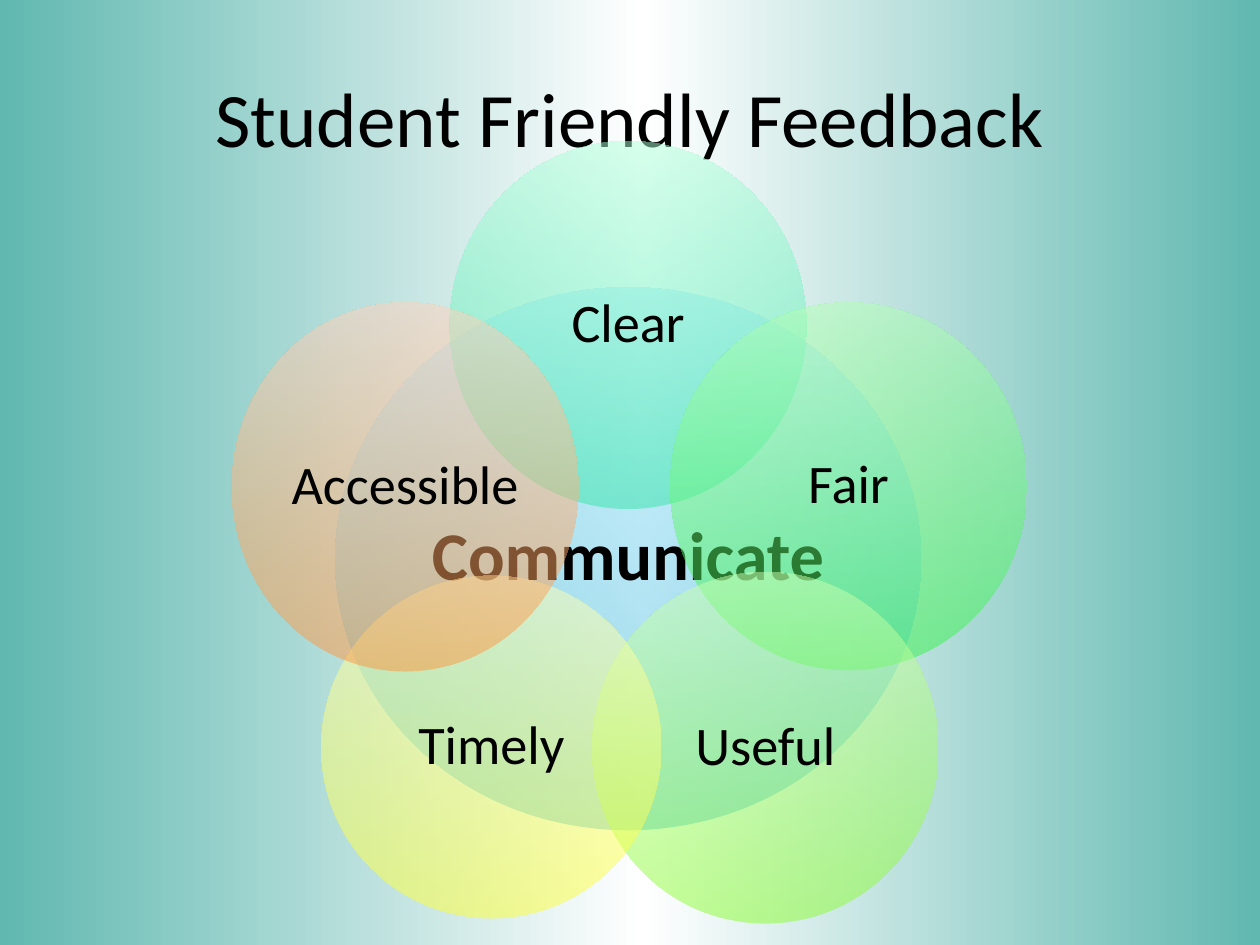
from lxml.etree import SubElement
from pptx import Presentation
from pptx.dml.color import RGBColor
from pptx.enum.shapes import MSO_SHAPE as SHAPE
from pptx.enum.text import MSO_ANCHOR as ANCHOR, PP_ALIGN as ALIGN
from pptx.oxml.ns import qn
from pptx.util import Inches, Pt

FONT = "Calibri"
COLORS = {
    "text": "000000", "edge": "60B8B0", "middle": "FFFFFF",
    "blue": "39B7D8", "pale blue": "A7E6FF",
    "mint": "34E6A9", "pale mint": "ACFFD9",
    "green": "31F245", "pale green": "B0FFB4",
    "lime": "8AFD2E", "pale lime": "CCFFB4",
    "yellow": "FEFF35", "pale yellow": "FFFFB9",
    "orange": "FF953E", "pale orange": "FFD2BD",
}

# Outer circles: label, colour, left, top, width, height in inches
PETALS = [
    ("Clear", "mint", 3.57, 1.12, 2.83, 2.92),
    ("Fair", "green", 5.32, 2.4, 2.83, 2.92),
    ("Useful", "lime", 4.7, 4.54, 2.75, 2.79),
    ("Timely", "yellow", 2.55, 4.57, 2.7, 2.72),
    ("Accessible", "orange", 1.84, 2.4, 2.75, 2.93),
]


def set_gradient(fill, parent, stops, angle):
    """Fill with stops of (position %, colour name, opacity %)."""
    fill.gradient()
    fill.gradient_angle = angle
    gs_list = parent.find(".//" + qn("a:gsLst"))
    for old in list(gs_list):
        gs_list.remove(old)
    for position, color, opacity in stops:
        gs = SubElement(gs_list, qn("a:gs"), pos=str(position * 1000))
        rgb = SubElement(gs, qn("a:srgbClr"), val=COLORS[color])
        if opacity < 100:
            SubElement(rgb, qn("a:alpha"), val=str(opacity * 1000))


def write(tf, text, size, bold=False):
    tf.word_wrap = True
    tf.vertical_anchor = ANCHOR.MIDDLE
    p = tf.paragraphs[0]
    p.alignment = ALIGN.CENTER
    r = p.add_run()
    r.text = text
    r.font.name, r.font.size, r.font.bold = FONT, Pt(size), bold
    r.font.color.rgb = RGBColor.from_string(COLORS["text"])
    return p


def add_circle(shapes, label, color, left, top, width, height,
               size=31, inset=0.04, bold=False):
    s = shapes.add_shape(SHAPE.OVAL, *map(Inches, (left, top, width, height)))
    s.shadow.inherit = False
    s.line.fill.background()
    set_gradient(s.fill, s._element.spPr,
                 [(0, color, 50), (100, "pale " + color, 50)], 90)
    tf = s.text_frame
    tf.margin_left = tf.margin_right = Inches(inset)
    tf.margin_top = tf.margin_bottom = Inches(inset)
    write(tf, label, size, bold).line_spacing = 0.9


def add_title(slide, text):
    title = slide.shapes.title
    title.left, title.top = Inches(0.5), Inches(0.3)
    title.width, title.height = Inches(9), Inches(1.25)
    write(title.text_frame, text, 44)


def main():
    prs = Presentation()
    prs.slide_width, prs.slide_height = Inches(10), Inches(7.5)
    slide = prs.slides.add_slide(prs.slide_layouts[5])

    # Background and title
    set_gradient(slide.background.fill, slide._element,
                 [(0, "edge", 80), (51, "middle", 100), (100, "edge", 80)], 0)
    add_title(slide, "Student Friendly Feedback")

    # Radial Venn diagram: the centre lies behind the outer circles
    venn = slide.shapes.add_group_shape().shapes
    add_circle(venn, "Communicate", "blue", 2.66, 2.28, 4.65, 4.31,
               size=39, inset=0.05, bold=True)
    for petal in PETALS:
        add_circle(venn, *petal)

    prs.save("out.pptx")


if __name__ == "__main__":
    main()
